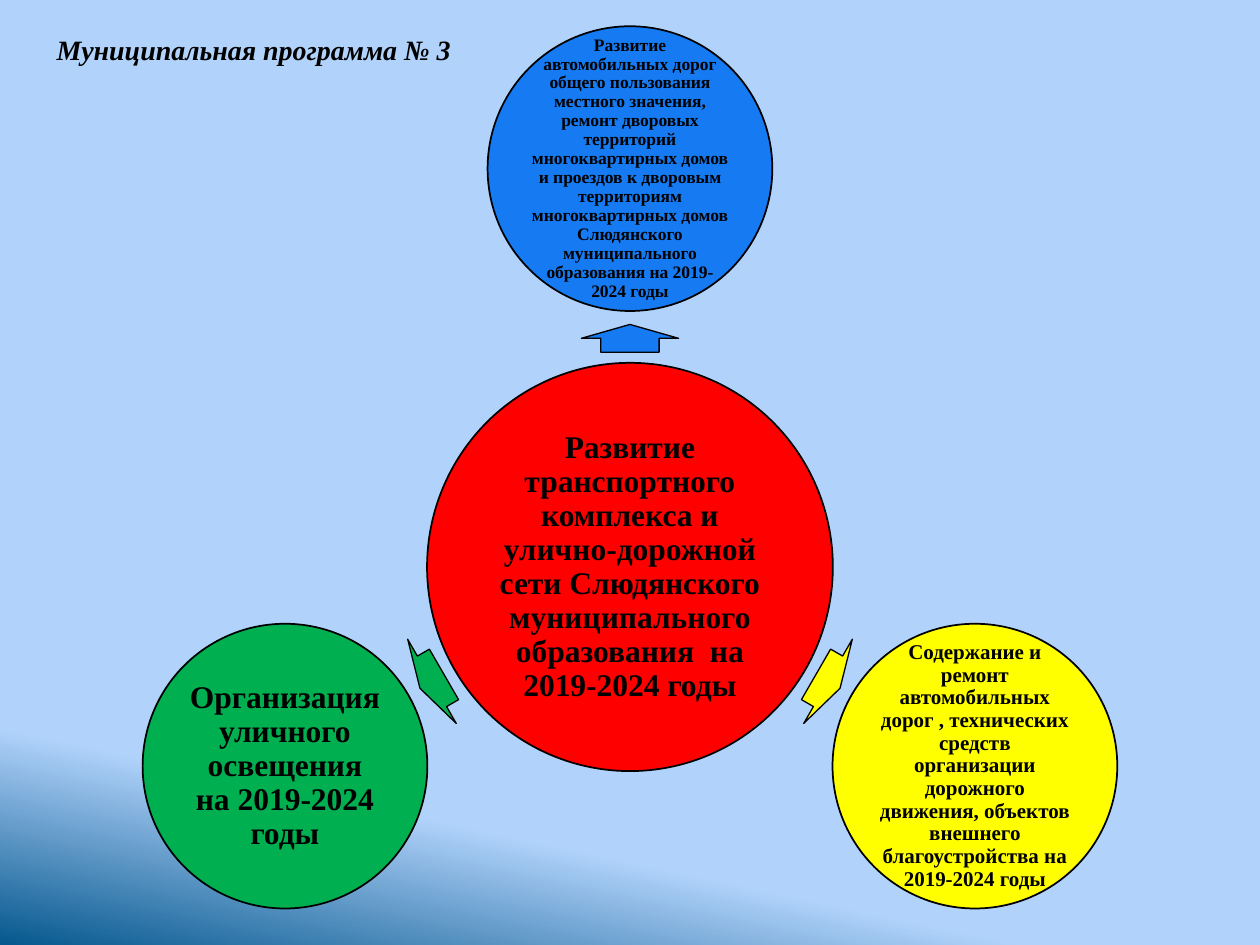
from math import cos, radians, sin

from pptx import Presentation
from pptx.dml.color import RGBColor
from pptx.enum.shapes import MSO_SHAPE as Shape
from pptx.enum.text import MSO_ANCHOR as Anchor, PP_ALIGN as Align
from pptx.util import Cm, Pt

FONT = "Times New Roman"
BLACK = RGBColor(0, 0, 0)
RED = RGBColor(0xFF, 0, 0)
BLUE = RGBColor(0x16, 0x7B, 0xF3)
YELLOW = RGBColor(0xFF, 0xFF, 0)
GREEN = RGBColor(0, 0xB0, 0x50)
BACKGROUND = [(0.82, RGBColor(0xB1, 0xD3, 0xFB)), (1, RGBColor(0x06, 0x58, 0x8E))]

TITLE = "Муниципальная программа № 3"
PROGRAM = (
    "Развитие транспортного комплекса и улично-дорожной сети "
    "Слюдянского муниципального образования  на 2019-2024 годы"
)
SUBPROGRAMS = [
    (270, BLUE, 10, 0.03,
     "Развитие автомобильных дорог общего пользования местного значения, "
     "ремонт дворовых территорий многоквартирных домов и проездов к дворовым "
     "территориям многоквартирных домов Слюдянского муниципального "
     "образования на 2019-2024 годы"),
    (30, YELLOW, 12, 0.05,
     "Содержание и ремонт автомобильных дорог , технических средств "
     "организации дорожного движения, объектов внешнего благоустройства "
     "на 2019-2024 годы"),
    (150, GREEN, 18, 0.08,
     "Организация уличного освещения на 2019-2024 годы"),
]

CENTER_X, CENTER_Y = 12.7, 11.43
CIRCLE_ORBIT, ARROW_ORBIT = 8.03, 4.61
PROGRAM_SIZE = (8.18, 8.23)
CIRCLE_SIZE = (5.74, 5.74)
ARROW_SIZE = (0.56, 1.96)


def add_figure(page, kind, size, color, border, angle=0, orbit=0):
    width, height = size
    x = CENTER_X + orbit * cos(radians(angle))
    y = CENTER_Y + orbit * sin(radians(angle))
    figure = page.shapes.add_shape(
        kind, Cm(x - width / 2), Cm(y - height / 2), Cm(width), Cm(height))
    figure.shadow.inherit = False
    figure.fill.solid()
    figure.fill.fore_color.rgb = color
    figure.line.color.rgb = BLACK
    figure.line.width = Pt(border)
    return figure


def set_text(frame, text, size, italic=False):
    para = frame.paragraphs[0]
    para.text = text
    para.font.name = FONT
    para.font.size = Pt(size)
    para.font.bold = True
    para.font.italic = italic
    para.font.color.rgb = BLACK
    return para


def add_circle(page, text, size, color, font_size, inset, angle=0, orbit=0):
    circle = add_figure(page, Shape.OVAL, size, color, 1, angle, orbit)
    frame = circle.text_frame
    frame.word_wrap = True
    frame.vertical_anchor = Anchor.MIDDLE
    frame.margin_left = frame.margin_right = Cm(inset)
    frame.margin_top = frame.margin_bottom = Cm(inset)
    para = set_text(frame, text, font_size)
    para.alignment = Align.CENTER
    para.line_spacing = 0.9


def add_arrow(page, color, angle):
    arrow = add_figure(page, Shape.RIGHT_ARROW, ARROW_SIZE, color, 0.75,
                       angle, ARROW_ORBIT)
    arrow.rotation = angle
    arrow.adjustments[0] = 0.6
    arrow.adjustments[1] = 0.5


def main():
    deck = Presentation()
    deck.slide_width, deck.slide_height = Cm(25.4), Cm(19.05)
    page = deck.slides.add_slide(deck.slide_layouts[6])

    fill = page.background.fill
    fill.gradient()
    fill.gradient_angle = 360 - 102
    for stop, (position, color) in zip(fill.gradient_stops, BACKGROUND):
        stop.position = position
        stop.color.rgb = color

    title = page.shapes.add_textbox(Cm(0.89), Cm(0.53), Cm(8.79), Cm(0.94))
    set_text(title.text_frame, TITLE, 16, italic=True)

    add_circle(page, PROGRAM, PROGRAM_SIZE, RED, 18, 0.08)
    for angle, color, font_size, inset, text in SUBPROGRAMS:
        add_arrow(page, color, angle)
        add_circle(page, text, CIRCLE_SIZE, color, font_size, inset,
                   angle, CIRCLE_ORBIT)

    deck.save("out.pptx")


if __name__ == "__main__":
    main()
